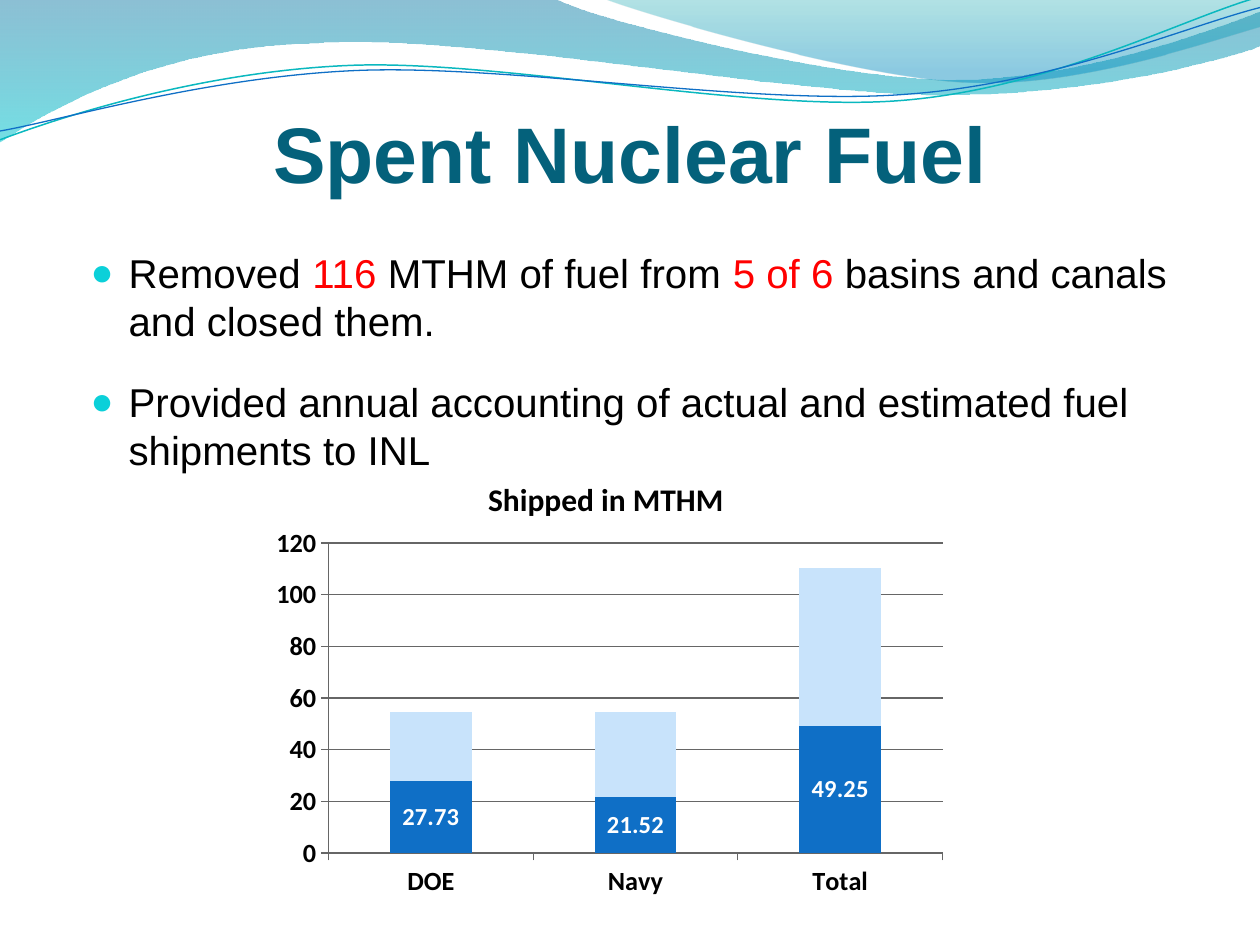
from pptx import Presentation
from pptx.chart.data import CategoryChartData as ChartData
from pptx.dml.color import RGBColor as RGB
from pptx.enum.chart import XL_CHART_TYPE as Kind, XL_TICK_MARK as Tick
from pptx.enum.text import MSO_ANCHOR as Anchor, PP_ALIGN as Align
from pptx.oxml import parse_xml
from pptx.oxml.ns import nsdecls, qn
from pptx.util import Inches, Pt

HUE = {name: RGB.from_string(code) for name, code in {
    "title": "04617B", "black": "000000", "red": "FF0000", "white": "FFFFFF",
    "blue": "0F6FC6", "pale": "C8E3FB", "teal": "0AB8BF", "grid": "666666",
    "deep": "0074A1", "aqua": "00C6CF", "sea": "00A1A9", "sky": "008BBF",
    "dot": "0BD0D9",
}.items()}


def style(font, size, color, name, bold=False):
    font.size, font.name, font.bold = Pt(size), name, bold
    font.color.rgb = HUE[color]


def node(tag, inner="", **attrs):
    """Make one XML element of the a: or c: kind."""
    extra = "".join(f' {key}="{val}"' for key, val in attrs.items())
    return parse_xml(f"<{tag} {nsdecls(tag[0])}{extra}>{inner}</{tag}>")


prs = Presentation()
prs.slide_width, prs.slide_height = Inches(10), Inches(7.5)
slide = prs.slides.add_slide(prs.slide_layouts[1])
shapes = slide.shapes

# Waves: start, lines (2 numbers) and curves (6), gradient stops or line
waves = [
    ((0, 0), [(4.4, -0.01), (4.76, 0.17, 6.64, 0.63, 7.58, 0.63),
              (8.53, 0.63, 9.58, 0.26, 10, 0.09), (10.01, 0.36),
              (9.83, 0.44, 8.7, 0.76, 7.46, 0.75),
              (6.22, 0.75, 3.82, 0.28, 2.57, 0.34),
              (1.29, 0.36, 0.46, 0.83, -0.01, 1.13)],
     [(0, "deep", 45), (1, "aqua", 55)], None),
    ((4.79, -0.01), [(5.09, 0.11, 6.82, 0.62, 7.69, 0.65),
                     (8.56, 0.69, 9.61, 0.32, 10, 0.21), (10, 0)],
     [(0, "sea", 30), (0.8, "sky", 45)], None),
    ((0, 1.11), [(0.48, 0.93, 1.58, 0.57, 2.77, 0.52),
                 (3.95, 0.47, 5.93, 0.89, 7.13, 0.8),
                 (8.33, 0.71, 9.38, 0.15, 9.98, -0.02)],
     None, ("teal", 0.85)),
    ((0, 1.04), [(0.47, 0.96, 1.64, 0.61, 2.83, 0.56),
                 (4.03, 0.51, 5.97, 0.84, 7.17, 0.75),
                 (8.36, 0.67, 9.41, 0.21, 10, 0.06)],
     None, ("blue", 0.75)),
]
for i, (start, steps, stops, line) in enumerate(waves):
    pts = [(Inches(step[k]), Inches(step[k + 1]))
           for step in steps for k in range(0, len(step), 2)]
    pen = shapes.build_freeform(*map(Inches, start))
    pen.add_line_segments(pts, close=bool(stops))
    wave = pen.convert_to_shape()
    wave.shadow.inherit = False
    # Join each three points of a curve into one Bezier segment
    legs = iter(list(wave.element.iter(qn("a:lnTo"))))
    for step in steps:
        first = next(legs)
        if len(step) == 6:
            curve = node("a:cubicBezTo")
            first.addprevious(curve)
            for leg in (first, next(legs), next(legs)):
                curve.append(leg[0])
                leg.getparent().remove(leg)
    if stops:
        wave.line.fill.background()
        wave.fill.gradient()
        wave.fill.gradient_angle = 270
        for stop, (place, color, _) in zip(wave.fill.gradient_stops, stops):
            stop.position, stop.color.rgb = place, HUE[color]
        for tint, (_, _, alpha) in zip(wave.element.iter(qn("a:srgbClr")), stops):
            tint.append(node("a:alpha", val=alpha * 1000))
    else:
        wave.fill.background()
        wave.line.color.rgb, wave.line.width = HUE[line[0]], Pt(line[1])
    shapes.element.insert(2 + i, wave.element)  # behind the text

# Title
title = shapes.title
title.left, title.top, title.width, title.height = map(Inches, (0.5, 0.77, 9, 1.56))
frame = title.text_frame
frame.vertical_anchor = Anchor.TOP
frame.margin_left = frame.margin_right = frame.margin_bottom = 0
frame.margin_top = Inches(0.06)
para = frame.paragraphs[0]
para.alignment = Align.CENTER
run = para.add_run()
run.text = "Spent Nuclear Fuel"
style(run.font, 45, "title", "Arial", True)

# Bullet list
body = slide.placeholders[1]
body.left, body.top, body.width, body.height = map(Inches, (0.62, 1.92, 8.75, 4.83))
frame = body.text_frame
frame.margin_right = Inches(0.05)
points = [
    [("Removed ", "black"), ("116 ", "red"), ("MTHM of fuel from ", "black"),
     ("5 of 6 ", "red"), ("basins and canals and closed them.", "black")],
    [("Provided annual accounting of actual and estimated fuel shipments to INL",
      "black")],
]
for i, point in enumerate(points):
    para = frame.add_paragraph() if i else frame.paragraphs[0]
    para.line_spacing, para.space_before = Pt(27.5), Pt(18.7 if i else 0)
    props = para._p.get_or_add_pPr()
    props.set("marL", str(Inches(0.3)))
    props.set("indent", str(Inches(-0.3)))
    props.append(node("a:buClr", f'<a:srgbClr val="{HUE["dot"]}"/>'))
    props.append(node("a:buSzPct", val=95000))
    props.append(node("a:buChar", char="●"))
    for text, color in point:
        run = para.add_run()
        run.text = text
        style(run.font, 23, color, "Arial")

# Stacked chart
data = ChartData()
data.categories = ["DOE", "Navy", "Total"]
data.add_series("Series 1", (27.73, 21.52, 49.25))
data.add_series("Series 2", (27, 33, 61))
chart = shapes.add_chart(Kind.COLUMN_STACKED, Inches(2.08), Inches(3.58),
                         Inches(5.5), Inches(3.61), data).chart
style(chart.font, 18, "black", "TeX Gyre Pagella")
chart.has_legend = False
chart.has_title = True
run = chart.chart_title.text_frame.paragraphs[0].add_run()
run.text = "Shipped in MTHM"
style(run.font, 18, "black", "Calibri", True)
chart.chart_title.include_in_layout = False

for axis in (chart.category_axis, chart.value_axis):
    style(axis.tick_labels.font, 15, "black", "Calibri", True)
    axis.major_tick_mark = Tick.OUTSIDE
    axis.format.line.color.rgb = HUE["grid"]
axis.minimum_scale, axis.maximum_scale, axis.major_unit = 0, 120, 20
axis.major_gridlines.format.line.color.rgb = HUE["grid"]

plot = chart.plots[0]
plot.gap_width, plot.overlap, plot.vary_by_categories = 150, 100, False
for bar, color in zip(plot.series, ("blue", "pale")):
    bar.format.fill.solid()
    bar.format.fill.fore_color.rgb = HUE[color]
labels = plot.series[0].data_labels
labels.show_value = True
style(labels.font, 14, "white", "Calibri", True)

# Fixed places for the chart title and the plot
for tag, spot, inner, box in (
        ("c:title", 1, "", {"x": 0.318, "y": 0.045}),
        ("c:plotArea", 0, '<c:layoutTarget val="inner"/>',
         {"x": 0.096, "y": 0.202, "w": 0.886, "h": 0.682})):
    owner = chart.element.find(".//" + qn(tag))
    for old in owner.findall(qn("c:layout")):
        owner.remove(old)
    inner += '<c:xMode val="edge"/><c:yMode val="edge"/>'
    inner += "".join(f'<c:{key} val="{val}"/>' for key, val in box.items())
    owner.insert(spot, node("c:layout", f"<c:manualLayout>{inner}</c:manualLayout>"))

prs.save("out.pptx")
